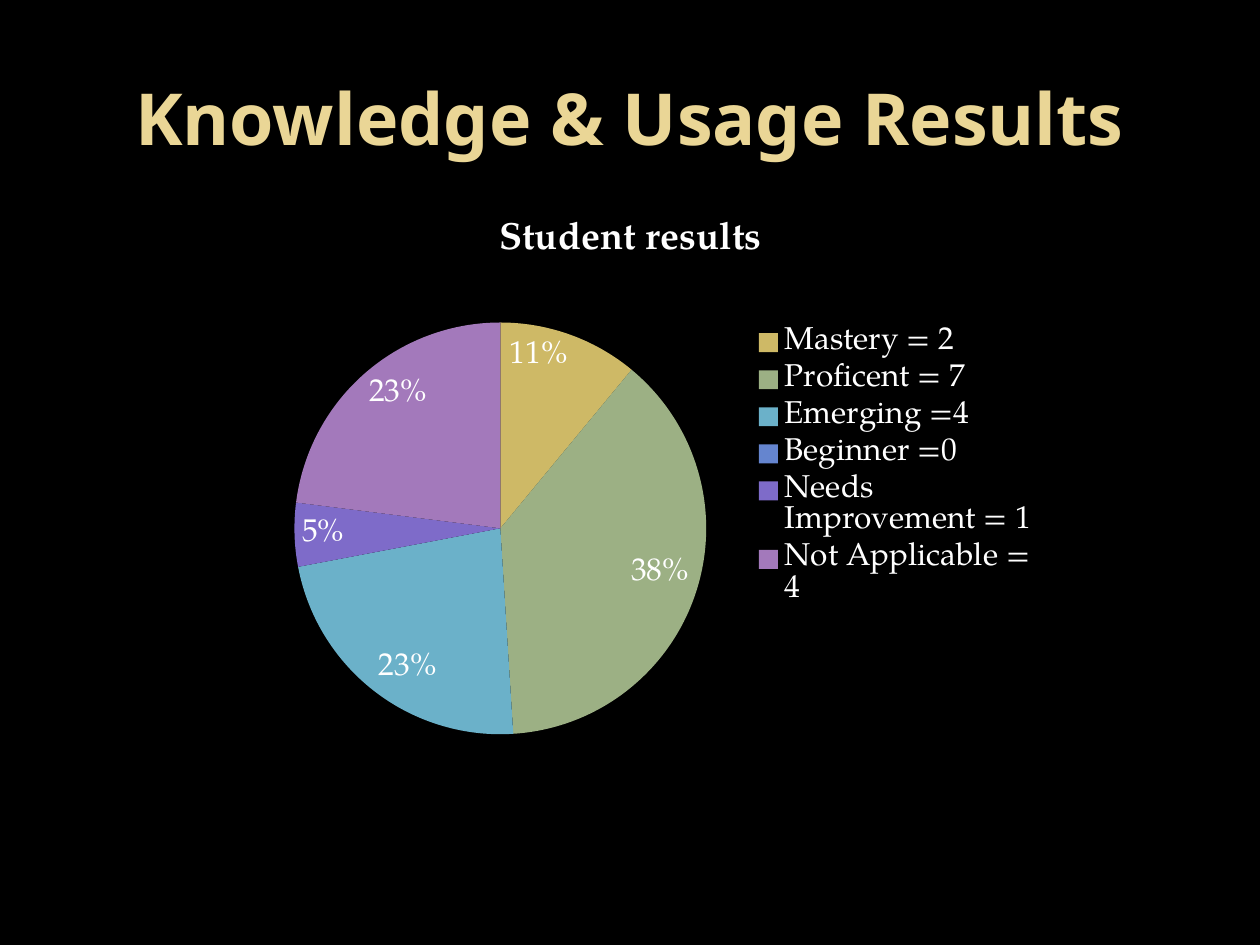
import pptx
import pptx.chart.data
import pptx.dml.color
import pptx.enum.chart
import pptx.enum.text
import pptx.oxml
import pptx.oxml.ns
import pptx.util
from pptx.util import Inches

COLORS = {
    "background": "000000",
    "title": "EAD696",
    "text": "FFFFFF",
    "Mastery = 2": "CEB966",
    "Proficent = 7": "9CB084",
    "Emerging =4": "6BB1C9",
    "Beginner =0": "6585CF",
    "Needs Improvement = 1": "7E6BC9",
    "Not Applicable = 4": "A379BB",
}
RESULTS = {
    "Mastery = 2": 0.11,
    "Proficent = 7": 0.38,
    "Emerging =4": 0.23,
    "Beginner =0": 0,
    "Needs Improvement = 1": 0.05,
    "Not Applicable = 4": 0.23,
}
TITLE_FORMAT = {"name": "Noto Sans", "size": pptx.util.Pt(41), "bold": True}
CHART_FORMAT = {"name": "TeX Gyre Pagella", "size": pptx.util.Pt(18), "bold": False}
CHART_TITLE_FORMAT = {"name": "TeX Gyre Pagella", "size": pptx.util.Pt(21.6), "bold": True}


def rgb(name):
    return pptx.dml.color.RGBColor.from_string(COLORS[name])


def set_attributes(target, values):
    for name, value in values.items():
        setattr(target, name, value)


def format_font(font, values, color):
    set_attributes(font, values)
    font.fill.solid()
    font.fill.fore_color.rgb = rgb(color)


def set_layout(element, index, box, inner=False):
    for old_layout in element.findall(pptx.oxml.ns.qn("c:layout")):
        element.remove(old_layout)
    target = '<c:layoutTarget val="inner"/>' if inner else ""
    modes = "".join(f'<c:{axis}Mode val="edge"/>' for axis in "xy")
    sizes = "".join(f'<c:{key} val="{value}"/>' for key, value in zip("xywh", box))
    layout = pptx.oxml.parse_xml(
        f'<c:layout {pptx.oxml.ns.nsdecls("c")}><c:manualLayout>'
        f"{target}{modes}{sizes}</c:manualLayout></c:layout>"
    )
    element.insert(index, layout)


def add_title(slide, left, top, width, height):
    shape = slide.shapes.add_textbox(left, top, width, height)
    set_attributes(shape.text_frame, {
        "word_wrap": True,
        "vertical_anchor": pptx.enum.text.MSO_ANCHOR.MIDDLE,
    })
    paragraph = shape.text_frame.paragraphs[0]
    paragraph.alignment = pptx.enum.text.PP_ALIGN.CENTER
    run = paragraph.add_run()
    run.text = "Knowledge & Usage Results"
    format_font(run.font, TITLE_FORMAT, "title")


def add_results_chart(slide, left, top, width, height):
    data = pptx.chart.data.CategoryChartData(number_format="0%")
    data.categories = list(RESULTS)
    data.add_series("Student results", list(RESULTS.values()))
    chart = slide.shapes.add_chart(
        pptx.enum.chart.XL_CHART_TYPE.PIE, left, top, width, height, data
    ).chart
    format_font(chart.font, CHART_FORMAT, "text")

    chart.has_title = True
    title_run = chart.chart_title.text_frame.paragraphs[0].add_run()
    title_run.text = "Student results"
    format_font(title_run.font, CHART_TITLE_FORMAT, "text")

    plot = chart.plots[0]
    plot.vary_by_categories = True
    for index, category in enumerate(RESULTS):
        fill = plot.series[0].points[index].format.fill
        fill.solid()
        fill.fore_color.rgb = rgb(category)

    plot.has_data_labels = True
    labels = plot.data_labels
    set_attributes(labels, {
        "show_value": True,
        "show_percentage": False,
        "number_format": "0%;;",
        "number_format_is_linked": False,
        "position": pptx.enum.chart.XL_LABEL_POSITION.INSIDE_END,
    })
    format_font(labels.font, CHART_FORMAT, "text")

    chart.has_legend = True
    legend = chart.legend
    set_attributes(legend, {
        "position": pptx.enum.chart.XL_LEGEND_POSITION.RIGHT,
        "include_in_layout": False,
    })
    format_font(legend.font, CHART_FORMAT, "text")

    plot_area = chart.element.find(".//" + pptx.oxml.ns.qn("c:plotArea"))
    legend_element = chart.element.find(".//" + pptx.oxml.ns.qn("c:legend"))
    set_layout(plot_area, 0, (0.1, 0.23, 0.49, 0.74), inner=True)
    set_layout(legend_element, 1, (0.64, 0.23, 0.35, 0.52))


def main():
    presentation = pptx.Presentation()
    set_attributes(presentation, {"slide_width": Inches(10), "slide_height": Inches(7.5)})
    slide = presentation.slides.add_slide(presentation.slide_layouts[6])
    slide.background.fill.solid()
    slide.background.fill.fore_color.rgb = rgb("background")
    add_title(slide, Inches(0.5), Inches(0.3), Inches(9), Inches(1.25))
    add_results_chart(slide, Inches(1.67), Inches(1.53), Inches(6.67), Inches(4.44))
    presentation.save("out.pptx")


if __name__ == "__main__":
    main()
